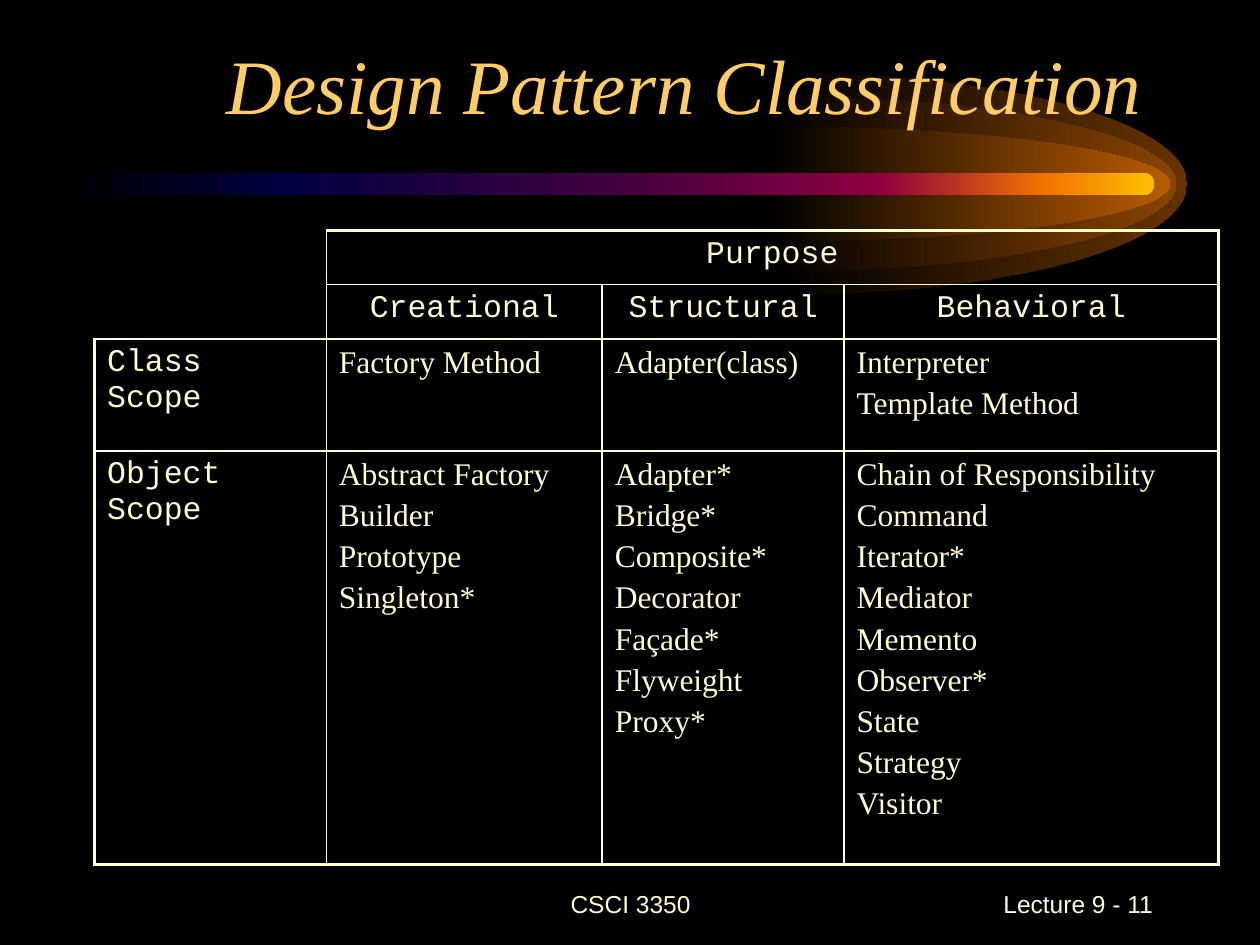
from lxml import etree
from pptx import Presentation
from pptx.dml.color import RGBColor
from pptx.enum.shapes import MSO_SHAPE
from pptx.enum.text import MSO_ANCHOR, MSO_AUTO_SIZE, PP_ALIGN
from pptx.oxml.ns import qn
from pptx.util import Inches, Pt

ROUNDED = MSO_SHAPE.ROUNDED_RECTANGLE
MIDDLE, BOTTOM = MSO_ANCHOR.MIDDLE, MSO_ANCHOR.BOTTOM
LEFT, CENTER, RIGHT = PP_ALIGN.LEFT, PP_ALIGN.CENTER, PP_ALIGN.RIGHT
COLORS = {"background": "000000", "text": "FFFFCC", "title": "FFCC66"}
HALOS = [
    (6.24, 1.75, "663300"),
    (6.16, 1.39, "894400"),
    (6.11, 0.91, "B75B00"),
]
TAIL_STOPS = [(0, "000000"), (20, "000040"), (50, "400040"),
              (75, "8F0040"), (90, "F27300"), (100, "FFBF00")]
SERIF, MONO, SANS = "Times New Roman", "Courier New", "Arial"
COLUMN_WIDTHS = [1.84, 2.19, 1.92, 2.97]
ROW_HEIGHTS = [0.43, 0.43, 0.89, 3.28]
THICK, THIN = 2.25, 1
PATTERNS = [
    [[], ["Purpose"], [], []],
    [[], ["Creational"], ["Structural"], ["Behavioral"]],
    [["Class Scope"], ["Factory Method"], ["Adapter(class)"],
     ["Interpreter", "Template Method"]],
    [["Object Scope"],
     ["Abstract Factory", "Builder", "Prototype", "Singleton*"],
     ["Adapter*", "Bridge*", "Composite*", "Decorator", "Façade*",
      "Flyweight", "Proxy*"],
     ["Chain of Responsibility", "Command", "Iterator*", "Mediator",
      "Memento", "Observer*", "State", "Strategy", "Visitor"]],
]


def add_run(paragraph, text, font, size, color, italic=False):
    run = paragraph.add_run()
    run.text = text
    run.font.name = font
    run.font.size = Pt(size)
    run.font.italic = italic
    run.font.color.rgb = RGBColor.from_string(color)


def apply_gradient(shape, stops):
    shape.shadow.inherit = False
    shape.line.fill.background()
    shape.fill.gradient()
    shape.fill.gradient_angle = 0
    stop_list = shape._element.spPr.find(".//" + qn("a:gsLst"))
    for stop in list(stop_list):
        stop_list.remove(stop)
    for position, color in stops:
        stop = etree.SubElement(stop_list, qn("a:gs"), pos=str(position * 1000))
        etree.SubElement(stop, qn("a:srgbClr"), val=color)


def bend_segment(segment, points):
    curve = etree.Element(qn("a:cubicBezTo"))
    for x, y in points:
        etree.SubElement(curve, qn("a:pt"), x=str(Inches(x)), y=str(Inches(y)))
    segment.getparent().replace(segment, curve)


def add_halo(slide, left, top, width, height, color):
    neck, middle = 0.05, height / 2
    radius = width - neck
    pull_x, pull_y = neck + radius * 0.55, middle * 0.45
    builder = slide.shapes.build_freeform(Inches(left + neck), Inches(top))
    builder.add_line_segments([
        (Inches(left + width), Inches(top + middle)),
        (Inches(left + neck), Inches(top + height)),
        (Inches(left), Inches(top + height)),
    ], close=True)
    halo = builder.convert_to_shape()
    upper, lower = halo._element.findall(".//" + qn("a:lnTo"))[:2]
    bend_segment(upper, [(pull_x, 0), (width, pull_y), (width, middle)])
    bend_segment(lower, [(width, height - pull_y), (pull_x, height),
                         (neck, height)])
    apply_gradient(halo, [(0, COLORS["background"]), (100, color)])


def add_comet(slide, left, top, width, height):
    for halo_left, halo_height, color in HALOS:
        halo_top = top + (height - halo_height) / 2
        add_halo(slide, halo_left, halo_top, 3.18, halo_height, color)
    tail = slide.shapes.add_shape(ROUNDED, Inches(left), Inches(top),
                                  Inches(width), Inches(height))
    tail.adjustments[0] = 0.5
    apply_gradient(tail, TAIL_STOPS)


def place_title(slide, left, top, width, height):
    title = slide.shapes.title
    title.left, title.top = Inches(left), Inches(top)
    title.width, title.height = Inches(width), Inches(height)
    frame = title.text_frame
    frame.auto_size = MSO_AUTO_SIZE.NONE
    frame.vertical_anchor = BOTTOM
    paragraph = frame.paragraphs[0]
    paragraph.alignment = RIGHT
    add_run(paragraph, "Design Pattern Classification", SERIF, 44,
            COLORS["title"], italic=True)
    slide.shapes._spTree.append(title._element)


def add_footer(slide, left, top, width, height, text, alignment):
    box = slide.shapes.add_textbox(Inches(left), Inches(top),
                                   Inches(width), Inches(height))
    frame = box.text_frame
    frame.word_wrap = True
    frame.vertical_anchor = MIDDLE
    paragraph = frame.paragraphs[0]
    paragraph.alignment = alignment
    add_run(paragraph, text, SANS, 14, COLORS["text"])


def border_widths(row, column):
    last_row, last_column = len(ROW_HEIGHTS) - 1, len(COLUMN_WIDTHS) - 1
    if column == 0 and row < 2:
        return {"L": 0, "R": THIN, "T": 0, "B": THIN if row == 1 else 0}
    reaches_right = column == last_column or row == 0
    return {
        "L": THICK if column == 0 else THIN,
        "R": THICK if reaches_right else THIN,
        "T": THICK if row == 0 else THIN,
        "B": THICK if row == last_row else THIN,
    }


def set_borders(cell, widths):
    properties = cell._tc.get_or_add_tcPr()
    for side, width in widths.items():
        line = etree.SubElement(properties, qn("a:ln" + side), w=str(Pt(width)))
        if width:
            fill = etree.SubElement(line, qn("a:solidFill"))
            etree.SubElement(fill, qn("a:srgbClr"), val=COLORS["text"])
        else:
            etree.SubElement(line, qn("a:noFill"))


def fill_cell(cell, lines, font, alignment):
    frame = cell.text_frame
    for index, text in enumerate(lines):
        paragraph = frame.add_paragraph() if index else frame.paragraphs[0]
        paragraph.alignment = alignment
        spacing = etree.SubElement(paragraph._p.get_or_add_pPr(), qn("a:spcBef"))
        etree.SubElement(spacing, qn("a:spcPct"), val="20000")
        add_run(paragraph, text, font, 18, COLORS["text"])


def add_pattern_table(slide, left, top):
    frame = slide.shapes.add_table(
        len(ROW_HEIGHTS), len(COLUMN_WIDTHS), Inches(left), Inches(top),
        Inches(sum(COLUMN_WIDTHS)), Inches(sum(ROW_HEIGHTS)))
    table = frame.table
    table.first_row = False
    table.horz_banding = False
    for column, width in zip(table.columns, COLUMN_WIDTHS):
        column.width = Inches(width)
    for row, height in zip(table.rows, ROW_HEIGHTS):
        row.height = Inches(height)
    table.cell(0, 1).merge(table.cell(0, 3))
    for row, entries in enumerate(PATTERNS):
        for column, lines in enumerate(entries):
            cell = table.cell(row, column)
            set_borders(cell, border_widths(row, column))
            cell.fill.background()
            font = MONO if row < 2 or column == 0 else SERIF
            fill_cell(cell, lines, font, CENTER if row < 2 else LEFT)


def main():
    presentation = Presentation()
    presentation.slide_width, presentation.slide_height = Inches(10), Inches(7.5)
    slide = presentation.slides.add_slide(presentation.slide_layouts[5])
    background = slide.background.fill
    background.solid()
    background.fore_color.rgb = RGBColor.from_string(COLORS["background"])
    add_comet(slide, 0.5, 1.37, 8.66, 0.18)
    add_footer(slide, 3.42, 6.92, 3.17, 0.5, "CSCI 3350", CENTER)
    add_footer(slide, 7.17, 6.92, 2.08, 0.5, "Lecture 9 - 11", RIGHT)
    place_title(slide, 0.67, 0.25, 8.5, 0.83)
    add_pattern_table(slide, 0.75, 1.83)
    presentation.save("out.pptx")


if __name__ == "__main__":
    main()
